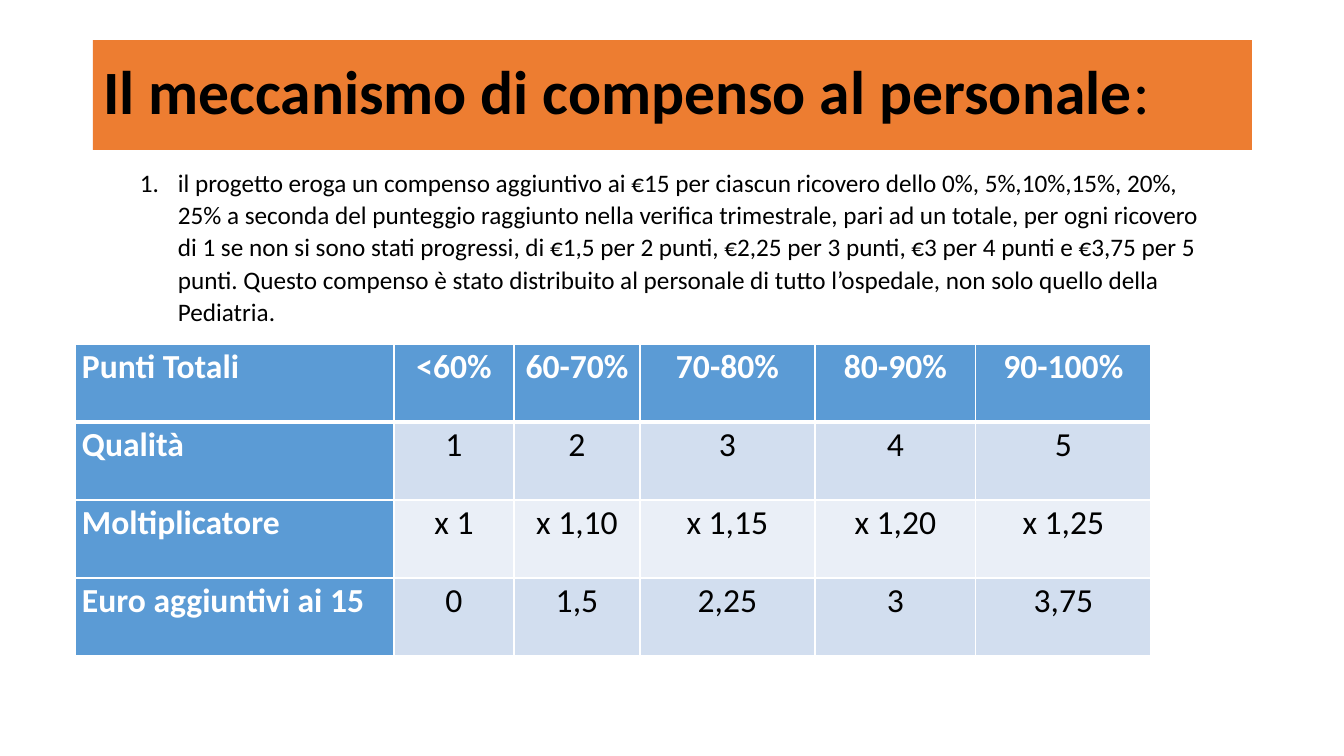
from lxml.etree import SubElement
from pptx import Presentation
from pptx.dml.color import RGBColor
from pptx.enum.text import MSO_ANCHOR, MSO_AUTO_SIZE, PP_ALIGN
from pptx.oxml.ns import qn
from pptx.util import Emu, Pt

FONT = "Calibri"
BLACK, WHITE = "000000", "FFFFFF"
ORANGE, BLUE = "ED7D31", "5B9BD5"
BANDS = ("EAEFF7", "D2DEEF")

TITLE = "Il meccanismo di compenso al personale"
RULE = (
    "il progetto eroga un compenso aggiuntivo ai €15 per ciascun ricovero dello "
    "0%, 5%,10%,15%, 20%, 25% a seconda del punteggio raggiunto nella verifica "
    "trimestrale, pari ad un totale, per ogni ricovero di 1 se non si sono stati "
    "progressi, di €1,5 per 2 punti, €2,25 per 3 punti, €3 per 4 punti e €3,75 "
    "per 5 punti. Questo compenso è stato distribuito al personale di tutto "
    "l’ospedale, non solo quello della Pediatria."
)
SCORES = (
    ("Punti Totali", "<60%", "60-70%", "70-80%", "80-90%", "90-100%"),
    ("Qualità", "1", "2", "3", "4", "5"),
    ("Moltiplicatore", "x 1", "x 1,10", "x 1,15", "x 1,20", "x 1,25"),
    ("Euro aggiuntivi ai 15", "0", "1,5", "2,25", "3", "3,75"),
)
COLUMN_WIDTHS = (319, 120, 126, 175, 161, 175)
ROW_HEIGHT = 78


def px(length):
    return Emu(round(length * 914400 / 100.8))


def color(value):
    return RGBColor.from_string(value)


def paint(item, value):
    item.fill.solid()
    item.fill.fore_color.rgb = color(value)


def write(para, text, size, ink=BLACK, bold=False):
    span = para.add_run()
    span.text = text
    span.font.name = FONT
    span.font.size = Pt(size)
    span.font.bold = bold
    span.font.color.rgb = color(ink)


def add_title(page):
    title = page.shapes.title
    title.left, title.top, title.width, title.height = map(px, (93, 40, 1159, 110))
    paint(title, ORANGE)
    frame = title.text_frame
    frame.auto_size = MSO_AUTO_SIZE.NONE
    frame.vertical_anchor = MSO_ANCHOR.MIDDLE
    para = frame.paragraphs[0]
    para.alignment = PP_ALIGN.LEFT
    para.line_spacing = 0.9
    write(para, TITLE, 44, bold=True)
    write(para, ":", 44)


def number(para, indent):
    """Number a paragraph 1., 2., ... with a hanging indent."""
    properties = para._p.get_or_add_pPr()
    properties.set("marL", str(px(indent)))
    properties.set("indent", str(-px(indent)))
    SubElement(properties, qn("a:buFont"), typeface="+mj-lt")
    SubElement(properties, qn("a:buAutoNum"), type="arabicPeriod")


def add_rule(page):
    box = page.shapes.add_textbox(*map(px, (130, 160, 1080, 173)))
    frame = box.text_frame
    frame.word_wrap = True
    frame.auto_size = MSO_AUTO_SIZE.SHAPE_TO_FIT_TEXT
    para = frame.paragraphs[0]
    number(para, 38)
    para.line_spacing = 1.07
    para.space_after = Pt(8)
    write(para, RULE, 18)


def add_borders(cell, **widths):
    """Draw white cell borders; widths are points by side: L, R, T, B."""
    properties = cell._tc.get_or_add_tcPr()
    for side, width in widths.items():
        line = SubElement(properties, qn(f"a:ln{side}"), w=str(Pt(width)))
        fill = SubElement(line, qn("a:solidFill"))
        SubElement(fill, qn("a:srgbClr"), val=WHITE)


def fill_cell(cell, text, row, column):
    heading = row == 0 or column == 0
    add_borders(cell, L=1, R=1, T=3 if row == 1 else 1, B=3 if row == 0 else 1)
    paint(cell, BLUE if heading else BANDS[row % 2])
    cell.margin_left = cell.margin_right = px(7)
    cell.margin_top = cell.margin_bottom = 0
    para = cell.text_frame.paragraphs[0]
    para.alignment = PP_ALIGN.CENTER if column else PP_ALIGN.LEFT
    para.line_spacing = 1.07
    write(para, text, 24, WHITE if heading else BLACK, heading)


def add_scores(page):
    size = (sum(COLUMN_WIDTHS), ROW_HEIGHT * len(SCORES))
    table = page.shapes.add_table(
        len(SCORES), len(COLUMN_WIDTHS), *map(px, (75, 344, *size))
    ).table
    for column, width in zip(table.columns, COLUMN_WIDTHS):
        column.width = px(width)
    for row, texts in enumerate(SCORES):
        table.rows[row].height = px(ROW_HEIGHT)
        for column, text in enumerate(texts):
            fill_cell(table.cell(row, column), text, row, column)


def main():
    deck = Presentation()
    deck.slide_width, deck.slide_height = px(1344), px(756)
    page = deck.slides.add_slide(deck.slide_layouts[5])
    add_title(page)
    add_scores(page)
    add_rule(page)
    deck.save("out.pptx")


if __name__ == "__main__":
    main()
